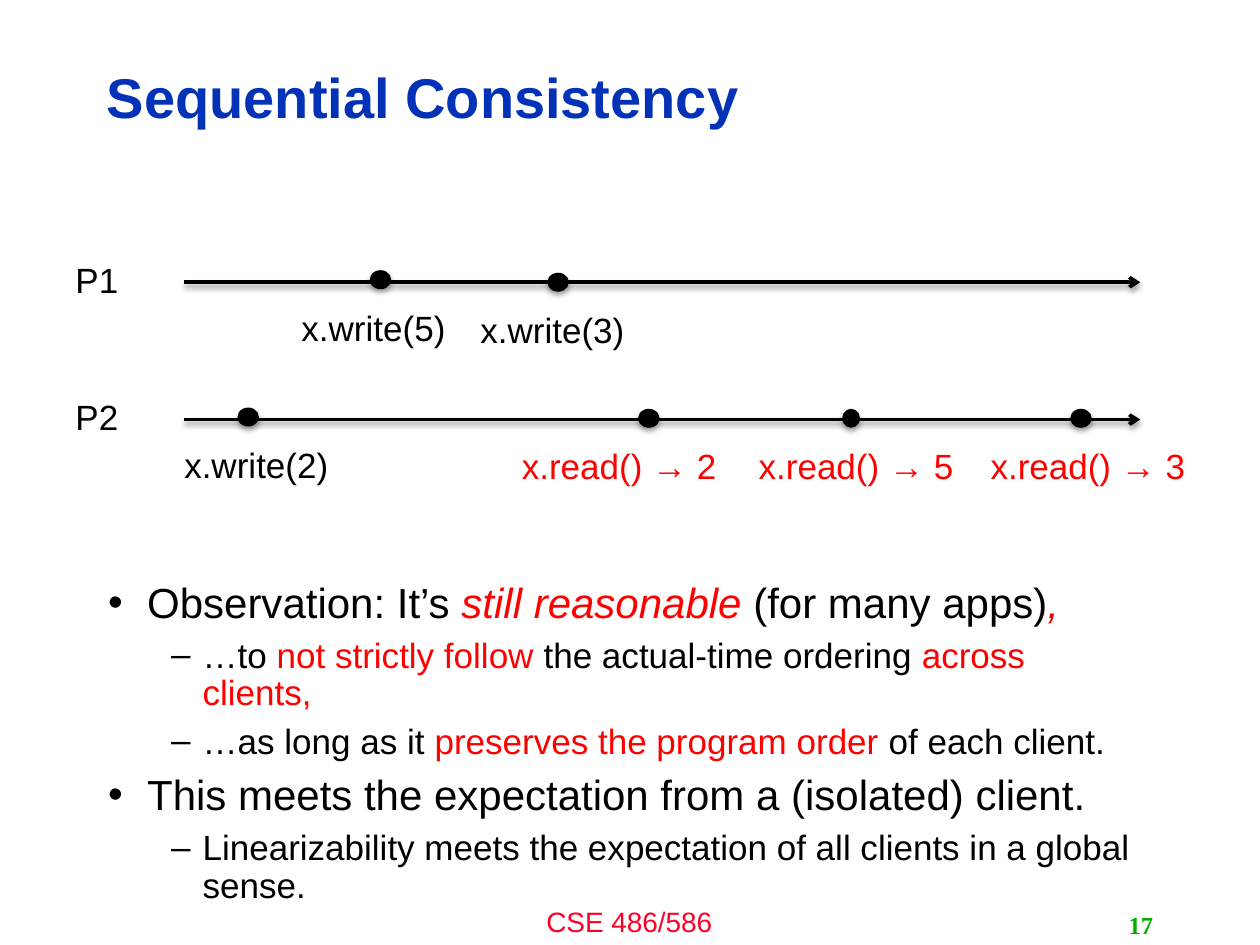
from dataclasses import dataclass

from lxml import etree
from pptx import Presentation
from pptx.dml.color import RGBColor
from pptx.enum.shapes import MSO_CONNECTOR, MSO_SHAPE
from pptx.enum.text import MSO_ANCHOR, PP_ALIGN
from pptx.oxml import parse_xml
from pptx.oxml.ns import nsdecls, qn
from pptx.util import Inches, Pt


@dataclass(frozen=True)
class Theme:
    black: str = "000000"
    red: str = "FF0000"
    title_blue: str = "0332B7"
    footer_red: str = "FC0128"
    number_green: str = "00AE00"
    font: str = "Arial"
    number_font: str = "Times New Roman"
    title_size: int = 32
    label_size: int = 20
    footer_size: int = 16
    number_size: int = 14
    level_sizes: tuple = (24, 20)


THEME = Theme()


@dataclass(frozen=True)
class Event:
    text: str
    dot_left: float
    dot_top: float
    label_left: float
    color: str = THEME.black
    dot_width: float = 0.16
    label_width: float = 3.43


@dataclass(frozen=True)
class Timeline:
    name: str
    y: float
    name_top: float
    events: tuple


@dataclass(frozen=True)
class Level:
    bullet: str
    margin: float
    hanging: float


TIMELINES = (
    Timeline("P1", 2.24, 2.0, (
        Event("x.write(5)", 2.94, 2.15, 1.25),
        Event("x.write(3)", 4.35, 2.17, 2.67),
    )),
    Timeline("P2", 3.33, 3.09, (
        Event("x.write(2)", 1.89, 3.24, 0.32),
        Event("x.read() → 2", 5.07, 3.25, 3.5, THEME.red, label_width=2.83),
        Event("x.read() → 5", 6.69, 3.25, 5.08, THEME.red, dot_width=0.13),
        Event("x.read() → 3", 8.5, 3.25, 6.92, THEME.red),
    )),
)
LEVELS = (Level("•", 0.31, 0.31), Level("–", 0.75, 0.25))

# Each bullet is a level and its pieces; *…* is red, _…_ is red italic
BULLETS = (
    (0, ("Observation: It’s ", "_still reasonable_", " (for many apps)", "_,_")),
    (1, ("…to ", "*not strictly follow*", " the actual-time ordering ",
         "*across clients,*")),
    (1, ("…as long as it ", "*preserves the program order*", " of each client.")),
    (0, ("This meets the expectation from a (isolated) client.",)),
    (1, ("Linearizability meets the expectation of all clients in a global sense.",)),
)


def style(r, size: int, color: str, font: str = THEME.font,
          bold: bool = False, italic: bool = False) -> None:
    r.font.name, r.font.size = font, Pt(size)
    r.font.bold, r.font.italic = bold, italic
    r.font.color.rgb = RGBColor.from_string(color)


def add_box(s, left: float, top: float, width: float, height: float):
    tf = s.shapes.add_textbox(*map(Inches, (left, top, width, height))).text_frame
    tf.word_wrap = True
    return tf


def add_text(s, text: str, box: tuple, size: int, color: str,
             align=PP_ALIGN.LEFT, anchor=MSO_ANCHOR.TOP,
             font: str = THEME.font, bold: bool = False) -> None:
    tf = add_box(s, *box)
    tf.text, tf.vertical_anchor = text, anchor
    p = tf.paragraphs[0]
    p.alignment = align
    style(p.runs[0], size, color, font, bold)


def add_shadow(sp, distance: float, opacity: int) -> None:
    sp._element.spPr.append(parse_xml(
        f'<a:effectLst {nsdecls("a")}><a:outerShdw blurRad="{Pt(3.1)}" '
        f'dist="{Pt(distance)}" dir="5400000" rotWithShape="0">'
        f'<a:srgbClr val="{THEME.black}"><a:alpha val="{opacity * 1000}"/>'
        '</a:srgbClr></a:outerShdw></a:effectLst>'))


def add_arrow(s, y: float) -> None:
    sp = s.shapes.add_connector(MSO_CONNECTOR.STRAIGHT, Inches(1.46), Inches(y),
                                Inches(9.05), Inches(y))
    sp.line.width = Pt(2)
    sp.line.color.rgb = RGBColor.from_string(THEME.black)
    etree.SubElement(sp.line._get_or_add_ln(), qn("a:tailEnd"), type="arrow")
    add_shadow(sp, 1.6, 38)


def add_event(s, event: Event) -> None:
    sp = s.shapes.add_shape(MSO_SHAPE.OVAL, Inches(event.dot_left),
                            Inches(event.dot_top), Inches(event.dot_width),
                            Inches(0.14))
    sp.fill.solid()
    sp.fill.fore_color.rgb = RGBColor.from_string(THEME.black)
    sp.line.color.rgb = RGBColor.from_string(THEME.black)
    sp.line.width = Pt(0.75)
    add_shadow(sp, 1.8, 35)
    box = (event.label_left, event.dot_top + 0.23, event.label_width, 0.44)
    add_text(s, event.text, box, THEME.label_size, event.color, PP_ALIGN.CENTER)


def add_timeline(s, timeline: Timeline) -> None:
    add_arrow(s, timeline.y)
    add_text(s, timeline.name, (0.5, timeline.name_top, 0.95, 0.44),
             THEME.label_size, THEME.black)
    for event in timeline.events:
        add_event(s, event)


def add_bullet(p, depth: int, pieces: tuple) -> None:
    level, size = LEVELS[depth], THEME.level_sizes[depth]
    p.level, p.line_spacing, p.space_before = depth, 0.9, Pt(0.3 * size)
    pPr = p._p.get_or_add_pPr()
    pPr.set("marL", str(Inches(level.margin)))
    pPr.set("indent", str(-Inches(level.hanging)))
    etree.SubElement(pPr, qn("a:buFont"), typeface=THEME.font)
    etree.SubElement(pPr, qn("a:buChar"), char=level.bullet)
    for piece in pieces:
        r = p.add_run()
        r.text = piece.strip("*_")
        color = THEME.red if piece[0] in "*_" else THEME.black
        style(r, size, color, italic=piece[0] == "_")


def main() -> None:
    prs = Presentation()
    prs.slide_width, prs.slide_height = Inches(10), Inches(7.5)
    s = prs.slides.add_slide(prs.slide_layouts[6])

    # Title
    add_text(s, "Sequential Consistency", (0.75, 0.36, 7.98, 0.81),
             THEME.title_size, THEME.title_blue, anchor=MSO_ANCHOR.MIDDLE, bold=True)

    # Process timelines
    for timeline in TIMELINES:
        add_timeline(s, timeline)

    # Observations
    tf = add_box(s, 0.76, 4.57, 8.4, 2.6)
    for i, (depth, pieces) in enumerate(BULLETS):
        add_bullet(tf.add_paragraph() if i else tf.paragraphs[0], depth, pieces)

    # Footer and slide number
    add_text(s, "CSE 486/586", (3.33, 7.13, 3.33, 0.37), THEME.footer_size,
             THEME.footer_red, PP_ALIGN.CENTER)
    add_text(s, "17", (7.17, 7.18, 2.08, 0.32), THEME.number_size,
             THEME.number_green, PP_ALIGN.RIGHT, MSO_ANCHOR.MIDDLE,
             THEME.number_font, bold=True)

    prs.save("out.pptx")


if __name__ == "__main__":
    main()
